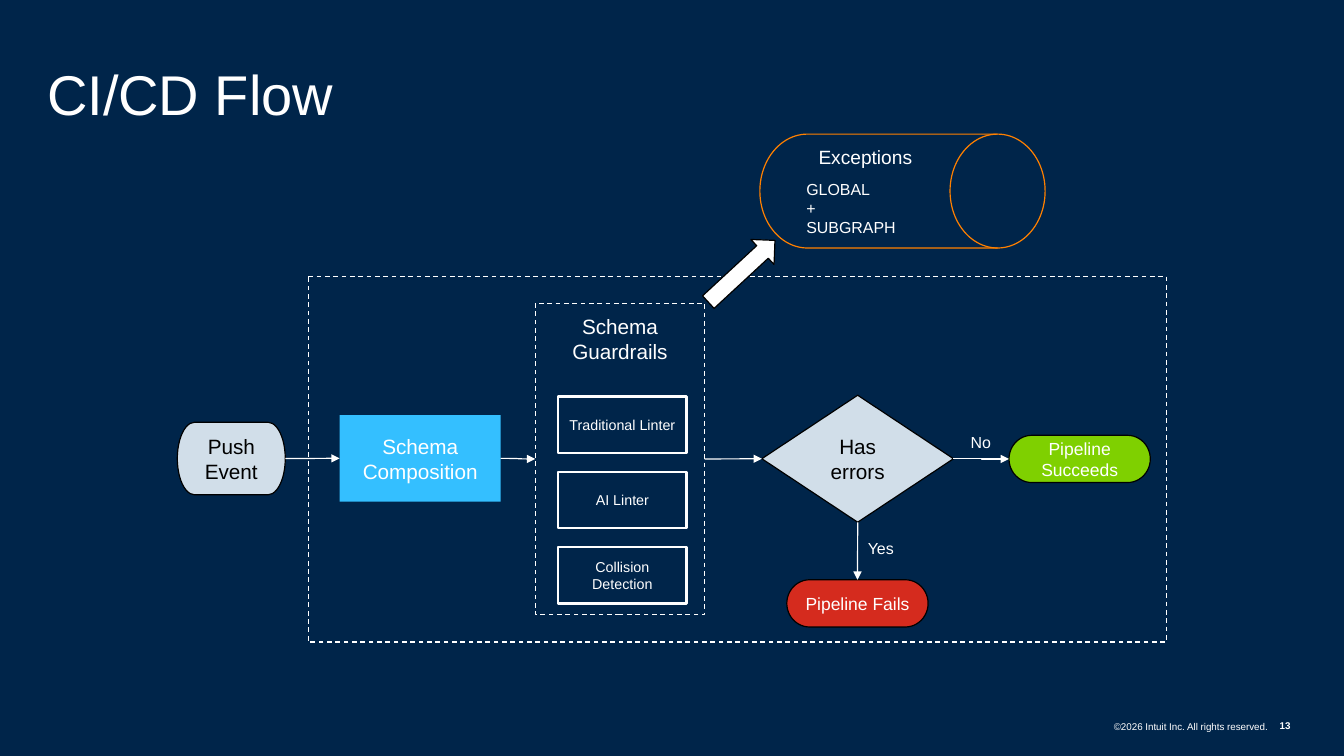
from lxml.etree import SubElement
from pptx import Presentation
from pptx.dml.color import RGBColor
from pptx.enum.dml import MSO_LINE
from pptx.enum.shapes import MSO_CONNECTOR, MSO_SHAPE
from pptx.enum.text import MSO_ANCHOR, MSO_AUTO_SIZE, PP_ALIGN
from pptx.oxml.ns import qn
from pptx.util import Cm, Pt

HUES = {
    "navy": "00254A",
    "white": "FFFFFF",
    "black": "000000",
    "mist": "D1DEE9",
    "sky": "34BFFF",
    "orange": "FF8000",
    "green": "7FD000",
    "red": "D52B1E",
}
TOP, RIGHT, BOTTOM, LEFT = 0, 3, 2, 1


def hue(name):
    return RGBColor.from_string(HUES[name])


def write(shape, text, size, color="white", align=PP_ALIGN.CENTER,
          anchor=MSO_ANCHOR.MIDDLE, pad=(0.28, 0.28), bold=False, lead=None):
    frame = shape.text_frame
    side, edge = Cm(pad[0]), Cm(pad[1])
    look = {
        "word_wrap": True,
        "auto_size": MSO_AUTO_SIZE.NONE,
        "vertical_anchor": anchor,
        "margin_left": side,
        "margin_right": side,
        "margin_top": edge,
        "margin_bottom": edge,
    }
    for key, value in look.items():
        setattr(frame, key, value)
    para = frame.paragraphs[0]
    para.text = text
    para.alignment = align
    if lead:
        para.line_spacing = lead
    style = {"name": "Arial", "size": Pt(size), "bold": bold}
    for run in para.runs:
        for key, value in style.items():
            setattr(run.font, key, value)
        run.font.color.rgb = hue(color)


def node(slide, kind, box, fill=None, line=None, width=0.85, dash=None):
    shape = slide.shapes.add_shape(kind, *map(Cm, box))
    shape.shadow.inherit = False
    if fill:
        shape.fill.solid()
        shape.fill.fore_color.rgb = hue(fill)
    else:
        shape.fill.background()
    if line:
        shape.line.color.rgb = hue(line)
        shape.line.width = Pt(width)
        shape.line.dash_style = dash
    else:
        shape.line.fill.background()
    return shape


def label(slide, box, text, size, align=PP_ALIGN.LEFT, anchor=MSO_ANCHOR.TOP, **more):
    shape = slide.shapes.add_textbox(*map(Cm, box))
    write(shape, text, size, align=align, anchor=anchor, **more)


def join(slide, kind, start, out, end, into):
    link = slide.shapes.add_connector(kind, 0, 0, 0, 0)
    link.begin_connect(start, out)
    link.end_connect(end, into)
    link.line.color.rgb = hue("white")
    link.line.width = Pt(0.85)
    SubElement(link.line._get_or_add_ln(), qn("a:tailEnd"), type="triangle")
    SubElement(link._element.spPr, qn("a:effectLst"))


def head(slide, box):
    title = slide.shapes.title
    for key, value in zip(("left", "top", "width", "height"), box):
        setattr(title, key, Cm(value))
    write(title, "CI/CD Flow", 40, align=PP_ALIGN.LEFT, anchor=MSO_ANCHOR.BOTTOM,
          pad=(0.25, 0.13), lead=0.95)


def guard(slide, box):
    x, y, _, _ = box
    panel = node(slide, MSO_SHAPE.RECTANGLE, box, line="white", dash=MSO_LINE.DASH)
    write(panel, "Schema Guardrails", 14.8, anchor=MSO_ANCHOR.TOP)
    for row, text in enumerate(("Traditional Linter", "AI Linter", "Collision Detection")):
        check = node(slide, MSO_SHAPE.RECTANGLE, (x + 0.58, y + 2.35 + 1.9 * row, 3.23, 1.42),
                     line="white", width=1.71)
        write(check, text, 10.2)
    return panel


def flow(slide, box):
    x, y, _, _ = box
    node(slide, MSO_SHAPE.FLOWCHART_PROCESS, box, line="white", dash=MSO_LINE.DASH)
    pill = MSO_SHAPE.FLOWCHART_TERMINATOR
    steps = (
        ("Push Event", pill, (-3.3, 3.68, 2.72, 1.83), "mist", "black", "black", 14.8, 0.28),
        ("Schema Composition", MSO_SHAPE.RECTANGLE, (0.79, 3.5, 4.06, 2.18),
         "sky", None, "white", 14.8, 0.28),
        ("Has errors", MSO_SHAPE.FLOWCHART_DECISION, (11.43, 3, 4.83, 3.2),
         "mist", "black", "black", 14.8, 0.18),
        ("Pipeline Succeeds", pill, (17.66, 4.01, 3.56, 1.19),
         "green", "black", "white", 12.5, 0.28),
        ("Pipeline Fails", pill, (12.06, 7.65, 3.56, 1.19),
         "red", "black", "white", 12.5, 0.28),
    )
    made = []
    for text, kind, (dx, dy, w, h), fill, line, color, size, pad in steps:
        step = node(slide, kind, (x + dx, y + dy, w, h), fill, line)
        write(step, text, size, color, pad=(pad, pad))
        made.append(step)
    push, merge, test, win, fail = made
    rails = guard(slide, (x + 5.72, y + 0.68, 4.27, 7.85))

    curve, elbow, plain = MSO_CONNECTOR.CURVE, MSO_CONNECTOR.ELBOW, MSO_CONNECTOR.STRAIGHT
    links = (
        (curve, push, RIGHT, merge, LEFT),
        (curve, merge, RIGHT, rails, LEFT),
        (plain, rails, RIGHT, test, LEFT),
        (elbow, test, RIGHT, win, LEFT),
        (plain, test, BOTTOM, fail, TOP),
    )
    for link in links:
        join(slide, *link)
    label(slide, (x + 16.41, y + 3.66, 1.45, 1.04), "No", 11.4)
    label(slide, (x + 13.82, y + 6.32, 1.42, 1.04), "Yes", 11.4)


def store(slide, box):
    x, y, _, _ = box
    drum = node(slide, MSO_SHAPE.FLOWCHART_DIRECT_ACCESS_STORAGE, box, line="orange")
    write(drum, "Exceptions", 13.7, align=PP_ALIGN.LEFT, anchor=MSO_ANCHOR.TOP)
    label(slide, (x + 0.89, y + 0.86, 4.83, 3.02), "GLOBAL\n+\nSUBGRAPH", 11.4)
    arrow = node(slide, MSO_SHAPE.UP_ARROW, (x - 0.89, y + 2.31, 0.86, 2.29), "white", "black")
    arrow.rotation = 47.2


def foot(slide, box):
    x, y, w, h = box
    label(slide, (x, y, 6.78, h), "©2026 Intuit Inc. All rights reserved.", 7,
          align=PP_ALIGN.RIGHT, anchor=MSO_ANCHOR.MIDDLE, pad=(0, 0.13))
    label(slide, (x + w - 0.99, y + 0.4, 0.99, 0.53), "13", 7,
          anchor=MSO_ANCHOR.MIDDLE, pad=(0.25, 0.13), bold=True)


def main():
    deck = Presentation()
    deck.slide_width, deck.slide_height = Cm(33.87), Cm(19.05)
    slide = deck.slides.add_slide(deck.slide_layouts[5])
    slide.background.fill.solid()
    slide.background.fill.fore_color.rgb = hue("navy")
    head(slide, (0.94, 1.85, 31.62, 1.52))
    flow(slide, (7.77, 6.96, 21.62, 9.22))
    store(slide, (19.15, 3.38, 7.19, 2.87))
    foot(slide, (25.17, 17.63, 7.82, 1.35))
    deck.save("out.pptx")


if __name__ == "__main__":
    main()
